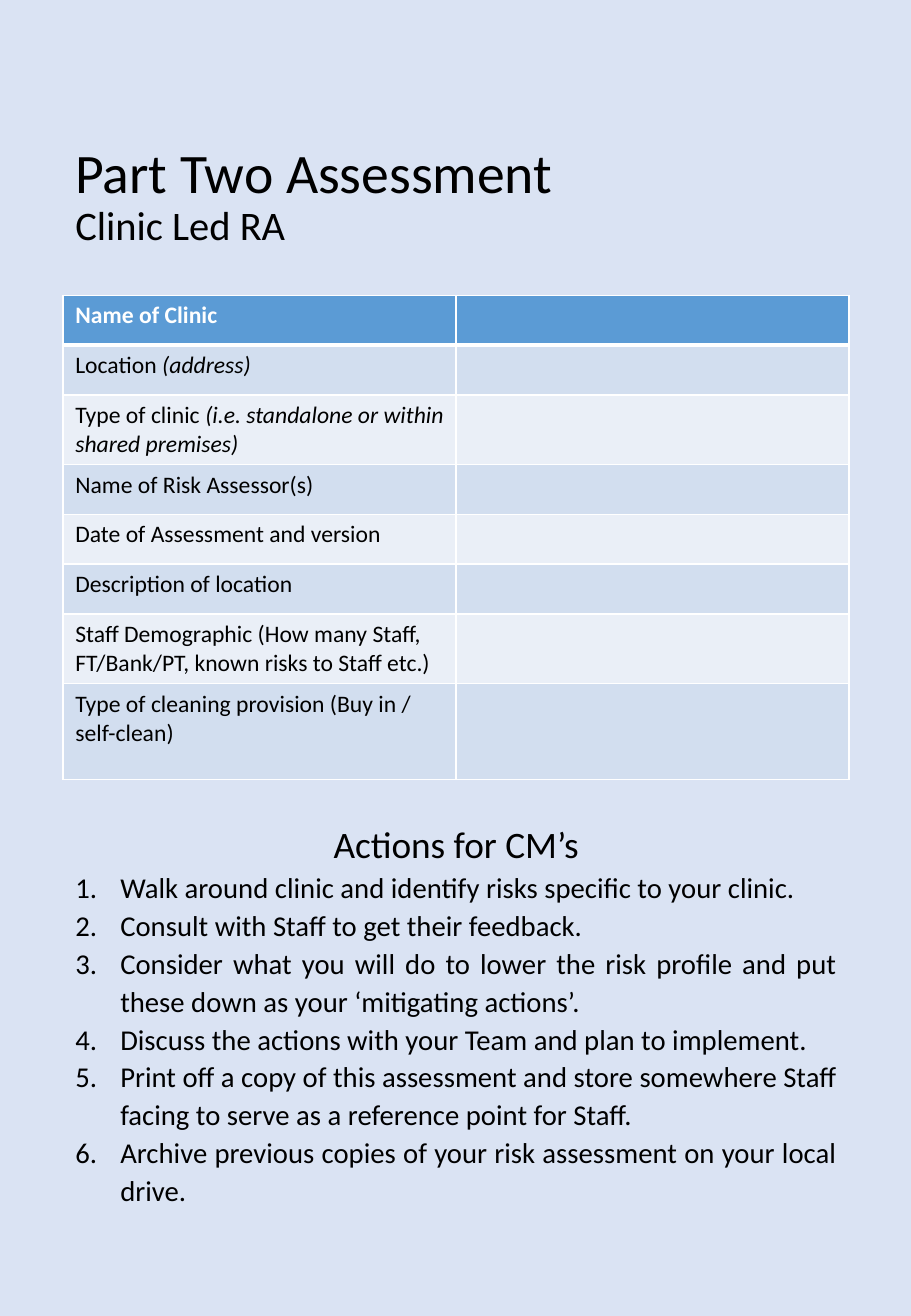
"""Build the clinic risk assessment page with its form table and action list."""
from lxml import etree
from pptx import Presentation
from pptx.dml.color import RGBColor
from pptx.enum.text import MSO_ANCHOR, MSO_AUTO_SIZE, PP_ALIGN
from pptx.oxml.ns import qn
from pptx.util import Inches, Pt

MIDDLE = MSO_ANCHOR.MIDDLE
NO_FIT = MSO_AUTO_SIZE.NONE
LEFT, CENTER, JUSTIFY = PP_ALIGN.LEFT, PP_ALIGN.CENTER, PP_ALIGN.JUSTIFY

FONT = "Calibri"
COLORS = {
    "background": "DAE3F3",
    "text": "000000",
    "white": "FFFFFF",
    "header": "5B9BD5",
    "odd": "D2DEEF",
    "even": "EAEFF7",
}
MARGIN, CONTENT_WIDTH = 0.52, 6.47

FORM_ROWS = [
    (0.41, "Name of Clinic", ""),
    (0.41, "Location", " (address)"),
    (0.56, "Type of clinic ", "(i.e. standalone or within shared premises)"),
    (0.41, "Name of Risk Assessor(s)", ""),
    (0.41, "Date of Assessment and version", ""),
    (0.41, "Description of location", ""),
    (0.56, "Staff Demographic (How many Staff, FT/Bank/PT, known risks to Staff etc.)", ""),
    (0.79, "Type of cleaning provision (Buy in / self-clean)", ""),
]
ACTIONS = [
    "Walk around clinic and identify risks specific to your clinic.",
    "Consult with Staff to get their feedback.",
    "Consider what you will do to lower the risk profile and put these down as your ‘mitigating actions’.",
    "Discuss the actions with your Team and plan to implement.",
    "Print off a copy of this assessment and store somewhere Staff facing to serve as a reference point for Staff.",
    "Archive previous copies of your risk assessment on your local drive.",
]


class Page:
    def __init__(self, presentation):
        self.slide = presentation.slides.add_slide(presentation.slide_layouts[1])
        self.paint(self.slide.background.fill, "background")

    def paint(self, fill, color):
        fill.solid()
        fill.fore_color.rgb = RGBColor.from_string(COLORS[color])

    def style(self, font, size, color="text", bold=False):
        font.name, font.size, font.bold = FONT, Pt(size), bold
        font.color.rgb = RGBColor.from_string(COLORS[color])

    def place(self, shape, top, height):
        shape.left, shape.top = Inches(MARGIN), Inches(top)
        shape.width, shape.height = Inches(CONTENT_WIDTH), Inches(height)
        frame = shape.text_frame
        frame.word_wrap, frame.auto_size = True, NO_FIT
        frame.vertical_anchor = MIDDLE
        return frame

    def title(self, top, height, heading, subheading):
        frame = self.place(self.slide.shapes.title, top, height)
        paragraph = frame.paragraphs[0]
        paragraph.alignment, paragraph.line_spacing = LEFT, 0.9
        for text, size in ((heading, 33), (subheading, 24)):
            if paragraph.runs:
                paragraph.add_line_break()
            run = paragraph.add_run()
            run.text = text
            self.style(run.font, size)

    def borders(self, cell, bottom):
        properties = cell._tc.get_or_add_tcPr()
        widths = {"a:lnL": 1, "a:lnR": 1, "a:lnT": 1, "a:lnB": bottom}
        for position, (tag, width) in enumerate(widths.items()):
            line = etree.Element(qn(tag), w=str(Pt(width)))
            fill = etree.SubElement(line, qn("a:solidFill"))
            etree.SubElement(fill, qn("a:srgbClr"), val=COLORS["white"])
            properties.insert(position, line)

    def form(self, top, rows):
        height = sum(row[0] for row in rows)
        table = self.slide.shapes.add_table(
            len(rows), 2, Inches(MARGIN), Inches(top), Inches(CONTENT_WIDTH), Inches(height)
        ).table
        for index, (row_height, label, hint) in enumerate(rows):
            table.rows[index].height = Inches(row_height)
            header = index == 0
            band = "header" if header else ("odd" if index % 2 else "even")
            for cell in table.rows[index].cells:
                self.paint(cell.fill, band)
                self.borders(cell, 3 if header else 1)
            paragraph = table.cell(index, 0).text_frame.paragraphs[0]
            self.style(paragraph.font, 14, "white" if header else "text", header)
            paragraph.add_run().text = label
            if hint:
                run = paragraph.add_run()
                run.text = hint
                run.font.italic = True

    def numbering(self, paragraph, numbered):
        properties = paragraph._p.get_or_add_pPr()
        indent = Inches(0.37) if numbered else 0
        properties.set("marL", str(indent))
        properties.set("indent", str(-indent))
        if numbered:
            etree.SubElement(properties, qn("a:buFont"), typeface="+mj-lt")
            etree.SubElement(properties, qn("a:buAutoNum"), type="arabicPeriod")
        else:
            etree.SubElement(properties, qn("a:buNone"))

    def actions(self, top, height, heading, items):
        frame = self.place(self.slide.placeholders[1], top, height)
        frame.margin_bottom = Inches(0.23)
        for index, text in enumerate([heading, *items]):
            paragraph = frame.add_paragraph() if index else frame.paragraphs[0]
            paragraph.text = text
            self.numbering(paragraph, index > 0)
            paragraph.alignment = JUSTIFY if index else CENTER
            paragraph.line_spacing, paragraph.space_before = 1.1, Pt(0)
            self.style(paragraph.font, 17 if index else 22.1)


def main():
    presentation = Presentation()
    presentation.slide_width, presentation.slide_height = Inches(7.5), Inches(10.83)
    page = Page(presentation)
    page.title(0.58, 2.09, "Part Two Assessment", "Clinic Led RA")
    page.form(2.43, FORM_ROWS)
    page.actions(6.69, 3.46, "Actions for CM’s", ACTIONS)
    presentation.save("out.pptx")


if __name__ == "__main__":
    main()
